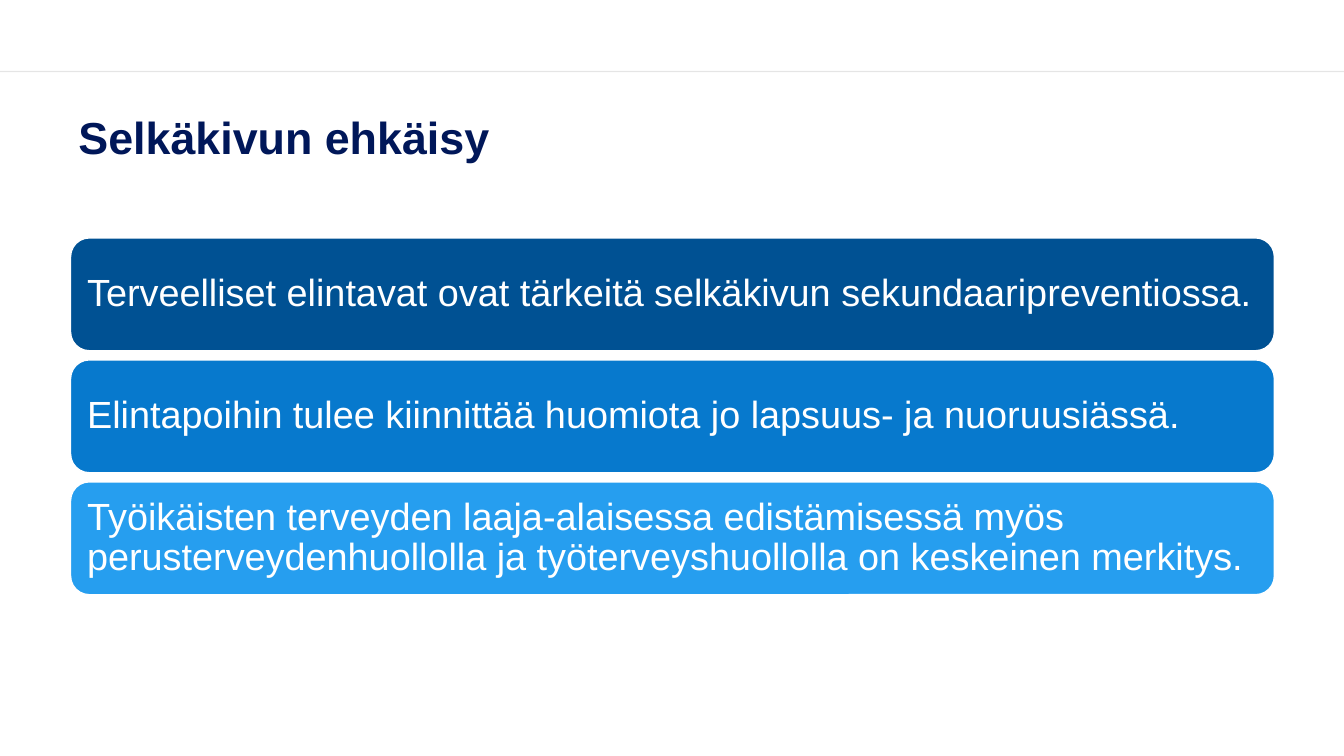
from dataclasses import dataclass

from lxml import etree
from pptx import Presentation
from pptx.dml.color import RGBColor
from pptx.enum.shapes import MSO_CONNECTOR, MSO_SHAPE
from pptx.enum.text import MSO_ANCHOR, PP_ALIGN
from pptx.oxml.ns import qn
from pptx.util import Inches, Pt

STRAIGHT = MSO_CONNECTOR.STRAIGHT
ROUNDED = MSO_SHAPE.ROUNDED_RECTANGLE
MIDDLE = MSO_ANCHOR.MIDDLE
LEFT = PP_ALIGN.LEFT


@dataclass(frozen=True)
class Theme:
    font: str = "Arial"
    title_size: int = 32
    body_size: int = 27
    title_color: str = "001759"
    white: str = "FFFFFF"
    rule_color: str = "000000"
    rule_opacity: int = 10
    message_fills: tuple = ("005193", "0779CD", "269EEF")


THEME = Theme()

# Grid, in inches
SLIDE_W, SLIDE_H = 13.33, 7.5
RULE_Y = 0.71
CONTENT_W = 11.94
MESSAGE_X, MESSAGE_TOP = 0.7, 2.36
MESSAGE_H, MESSAGE_STEP = 1.12, 1.21
MESSAGE_INSET = 0.11

TITLE = "Selkäkivun ehkäisy"
MESSAGES = (
    "Terveelliset elintavat ovat tärkeitä selkäkivun sekundaaripreventiossa.",
    "Elintapoihin tulee kiinnittää huomiota jo lapsuus- ja nuoruusiässä.",
    "Työikäisten terveyden laaja-alaisessa edistämisessä myös "
    "perusterveydenhuollolla ja työterveyshuollolla on keskeinen merkitys.",
)


def rgb(value):
    return RGBColor.from_string(value)


def write(frame, text, size, color, bold=False):
    frame.word_wrap = True
    frame.vertical_anchor = MIDDLE
    frame.text = text
    paragraph = frame.paragraphs[0]
    paragraph.alignment = LEFT
    paragraph.line_spacing = 0.9
    font = paragraph.runs[0].font
    font.name = THEME.font
    font.size = Pt(size)
    font.bold = bold
    font.color.rgb = rgb(color)


def add_header_rule(slide):
    rule = slide.shapes.add_connector(
        STRAIGHT, 0, Inches(RULE_Y), Inches(SLIDE_W), Inches(RULE_Y))
    rule.line.width = Pt(1)
    rule.line.color.rgb = rgb(THEME.rule_color)
    properties = rule._element.spPr
    color = properties.find(".//" + qn("a:srgbClr"))
    etree.SubElement(color, qn("a:alpha"), val=str(THEME.rule_opacity * 1000))
    etree.SubElement(properties, qn("a:effectLst"))


def add_title(slide):
    title = slide.shapes.add_textbox(
        Inches(0.68), Inches(0.93), Inches(CONTENT_W), Inches(0.91))
    write(title.text_frame, TITLE, THEME.title_size, THEME.title_color, bold=True)


def add_message(slide, row, text, fill):
    message = slide.shapes.add_shape(
        ROUNDED, Inches(MESSAGE_X), Inches(MESSAGE_TOP + row * MESSAGE_STEP),
        Inches(CONTENT_W), Inches(MESSAGE_H))
    message.shadow.inherit = False
    message.fill.solid()
    message.fill.fore_color.rgb = rgb(fill)
    message.line.color.rgb = rgb(THEME.white)
    message.line.width = Pt(1)
    frame = message.text_frame
    frame.margin_left = frame.margin_right = Inches(MESSAGE_INSET)
    frame.margin_top = frame.margin_bottom = Inches(MESSAGE_INSET)
    write(frame, text, THEME.body_size, THEME.white)


def main():
    presentation = Presentation()
    presentation.slide_width = Inches(SLIDE_W)
    presentation.slide_height = Inches(SLIDE_H)
    slide = presentation.slides.add_slide(presentation.slide_layouts[6])

    # Header
    add_header_rule(slide)
    add_title(slide)

    # Stacked messages
    for row, (text, fill) in enumerate(zip(MESSAGES, THEME.message_fills)):
        add_message(slide, row, text, fill)

    presentation.save("out.pptx")


if __name__ == "__main__":
    main()
